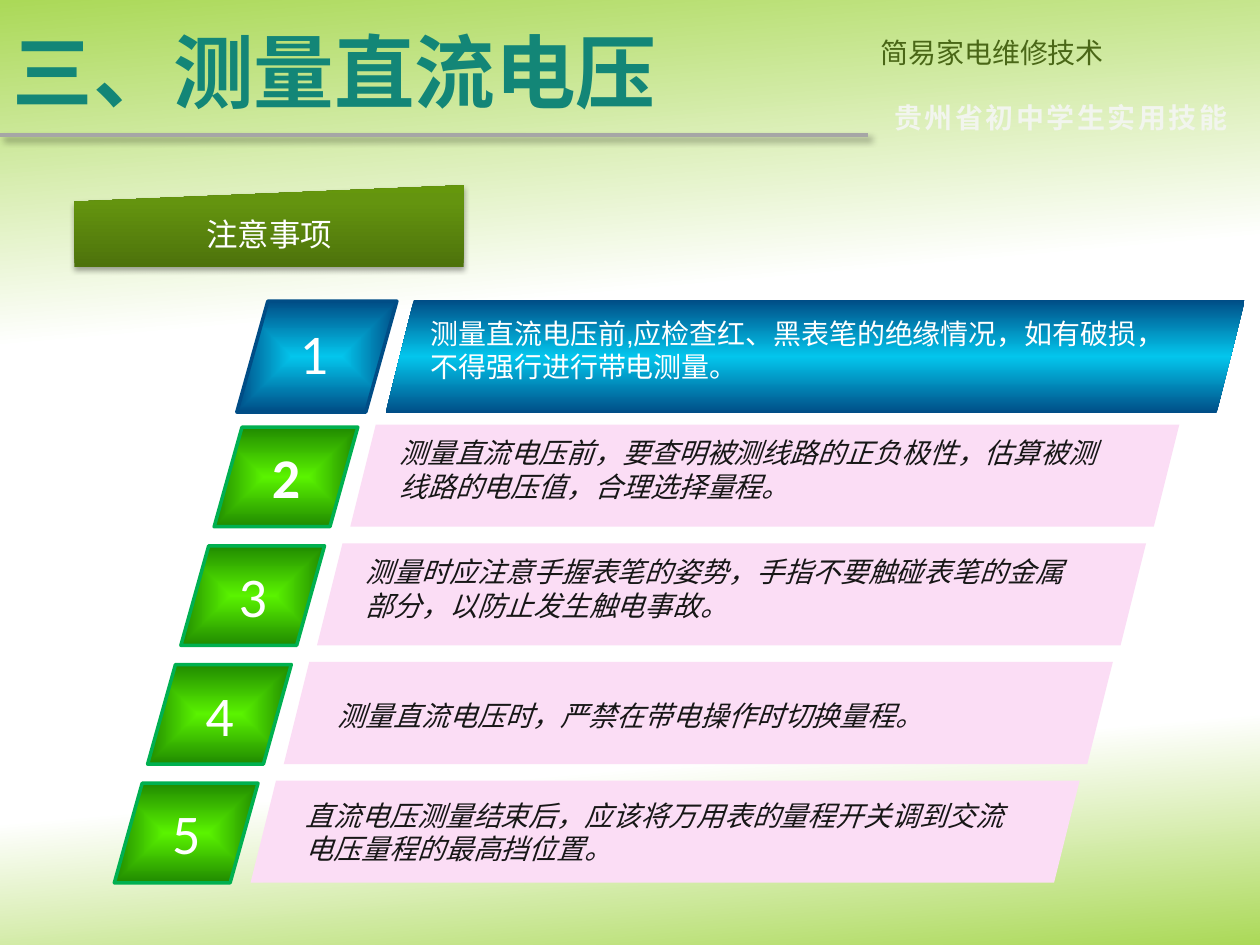
from dataclasses import dataclass

from lxml import etree
from pptx import Presentation
from pptx import util as u
from pptx.dml.color import RGBColor
from pptx.enum import shapes, text
from pptx.oxml import parse_xml
from pptx.oxml.ns import nsdecls, qn

# The slide is a grid of 100 columns by 75 rows.
COLUMN = ROW = u.Inches(0.1)

WHITE = RGBColor(0xFF, 0xFF, 0xFF)
BLACK = RGBColor(0x00, 0x00, 0x00)
LIME = RGBColor(0xAB, 0xD9, 0x58)
TEAL = RGBColor(0x13, 0x86, 0x77)
OLIVE = RGBColor(0x4A, 0x67, 0x17)
PALE = RGBColor(0xF2, 0xF5, 0xEE)
GREY = RGBColor(0xA6, 0xA6, 0xA6)
INK = RGBColor(0x17, 0x17, 0x17)
PINK = RGBColor(0xFB, 0xDD, 0xF5)
DEEP_BLUE = RGBColor(0x00, 0x4D, 0x86)
BRIGHT_BLUE = RGBColor(0x03, 0xC6, 0xED)
GREEN_EDGE = RGBColor(0x00, 0xB0, 0x50)
DEEP_GREEN = RGBColor(0x20, 0x8A, 0x00)
BRIGHT_GREEN = RGBColor(0x5A, 0xF3, 0x00)

BACKGROUND = [(0, LIME), (33, WHITE), (52, WHITE), (78, WHITE), (100, LIME)]
LABEL = [(0, RGBColor(0x4D, 0x72, 0x0B)), (80, RGBColor(0x64, 0x94, 0x0F)),
         (100, RGBColor(0x65, 0x97, 0x0C))]
BLUE_BAND = [(0, DEEP_BLUE), (50, BRIGHT_BLUE), (100, DEEP_BLUE)]
BLUE_GLOW = [(0, BRIGHT_BLUE), (100, DEEP_BLUE)]
GREEN_GLOW = [(0, BRIGHT_GREEN), (100, DEEP_GREEN)]

CHINESE = "Noto Sans CJK SC"


@dataclass
class Area:
    column: float
    row: float
    columns: float
    rows: float

    def lengths(self) -> list[int]:
        return [int(self.column * COLUMN), int(self.row * ROW),
                int(self.columns * COLUMN), int(self.rows * ROW)]


@dataclass
class Style:
    size: float
    color: RGBColor
    font: str = CHINESE
    bold: bool = False
    italic: bool = False
    spacing: int = 0


@dataclass
class Note:
    words: str
    indent: float
    drop: float
    rows: float = 6.4
    bold_number: bool = False


NOTES = [
    Note("测量直流电压前，要查明被测线路的正负极性，估算被测线路的电压值，合理选择量程。",
         2.9, 0.4, bold_number=True),
    Note("测量时应注意手握表笔的姿势，手指不要触碰表笔的金属部分，以防止发生触电事故。", 2.9, 0.4),
    Note("测量直流电压时，严禁在带电操作时切换量程。", 3.3, 2.4, 3.7),
    Note("直流电压测量结束后，应该将万用表的量程开关调到交流电压量程的最高挡位置。", 3.4, 0.9),
]


def set_gradient(fill, parent, stops: list, angle: float | None = None) -> None:
    """Fill with stops along a clockwise angle, or from the centre without one."""
    fill.solid()
    marks = "".join(f'<a:gs pos="{place * 1000}"><a:srgbClr val="{color}"/></a:gs>'
                    for place, color in stops)
    if angle is None:
        course = ('<a:path path="shape"><a:fillToRect l="50000" t="50000" '
                  'r="50000" b="50000"/></a:path>')
    else:
        course = f'<a:lin ang="{int(angle * 60000)}" scaled="0"/>'
    gradient = parse_xml(f'<a:gradFill {nsdecls("a")} rotWithShape="1">'
                         f'<a:gsLst>{marks}</a:gsLst>{course}</a:gradFill>')
    parent.replace(parent.find(qn("a:solidFill")), gradient)


def add_shadow(properties, alpha: int, blur: float, distance: float, angle: int) -> None:
    effects = properties.find(qn("a:effectLst"))
    if effects is None:
        effects = etree.SubElement(properties, qn("a:effectLst"))
    effects.append(parse_xml(
        f'<a:outerShdw {nsdecls("a")} blurRad="{u.Pt(blur)}" dist="{u.Pt(distance)}" '
        f'dir="{angle * 60000}" algn="tl" rotWithShape="0"><a:srgbClr val="{BLACK}">'
        f'<a:alpha val="{alpha * 1000}"/></a:srgbClr></a:outerShdw>'))


def write(shape, words: str, style: Style, align=text.PP_ALIGN.LEFT,
          anchor=text.MSO_ANCHOR.TOP) -> None:
    frame = shape.text_frame
    frame.text = words
    frame.word_wrap = True
    frame.vertical_anchor = anchor
    para = frame.paragraphs[0]
    para.alignment = align
    for span in para.runs:
        font = span.font
        font.size = u.Pt(style.size)
        font.name = style.font
        font.bold = style.bold
        font.italic = style.italic
        font.color.rgb = style.color
        properties = span._r.get_or_add_rPr()
        properties.find(qn("a:latin")).addnext(
            parse_xml(f'<a:ea {nsdecls("a")} typeface="{CHINESE}"/>'))
        if style.spacing:
            properties.set("spc", str(style.spacing))


def add_words(page, area: Area, words: str, style: Style, **layout) -> None:
    write(page.shapes.add_textbox(*area.lengths()), words, style, **layout)


def add_block(page, kind, area: Area):
    block = page.shapes.add_shape(kind, *area.lengths())
    block.shadow.inherit = False
    block.line.fill.background()
    return block


def add_tile(page, area: Area, stops: list, edge: RGBColor) -> None:
    tile = add_block(page, shapes.MSO_SHAPE.PARALLELOGRAM, area)
    tile.adjustments[0] = 0.28
    set_gradient(tile.fill, tile._element.spPr, stops)
    tile.line.color.rgb = edge
    tile.line.width = u.Pt(2)


def add_first_note(page) -> None:
    panel = add_block(page, shapes.MSO_SHAPE.PARALLELOGRAM, Area(30.6, 23.8, 68.2, 9))
    set_gradient(panel.fill, panel._element.spPr, BLUE_BAND, 270)
    add_tile(page, Area(18.8, 23.9, 12.7, 8.8), BLUE_GLOW, DEEP_BLUE)
    add_words(page, Area(22.8, 24.8, 4.8, 6.3), "1", Style(32, WHITE, "Calibri"))
    add_words(page, Area(33.2, 24.6, 59.1, 6.4),
              "测量直流电压前,应检查红、黑表笔的绝缘情况，如有破损，不得强行进行带电测量。",
              Style(16, WHITE, "Arial"))


def add_note(page, index: int, note: Note) -> None:
    """Each note sits one step lower and further left than the one before."""
    left, top = 27.8 - 2.64 * index, 33.7 + 9.42 * index
    panel = add_block(page, shapes.MSO_SHAPE.PARALLELOGRAM, Area(left, top, 65.8, 8.1))
    panel.fill.solid()
    panel.fill.fore_color.rgb = PINK
    add_tile(page, Area(left - 10.8, top + 0.2, 11.4, 7.9), GREEN_GLOW, GREEN_EDGE)
    add_words(page, Area(left - 7.2, top + 0.95, 4.3, 6.4), str(index + 2),
              Style(32, WHITE, "Calibri", bold=note.bold_number))
    add_words(page, Area(left + note.indent, top + note.drop, 59.1, note.rows),
              note.words, Style(16, INK, "Arial", italic=True))


def add_heading(page) -> None:
    title = page.shapes.title
    title.left, title.top, title.width, title.height = Area(0, 0.5, 68.9, 10.2).lengths()
    write(title, "三、测量直流电压", Style(46, TEAL, bold=True),
          anchor=text.MSO_ANCHOR.MIDDLE)
    rule = page.shapes.add_connector(
        shapes.MSO_CONNECTOR.STRAIGHT, 0, int(10.7 * ROW), int(68.9 * COLUMN), int(10.7 * ROW))
    rule.line.color.rgb = GREY
    rule.line.width = u.Pt(2.25)
    add_shadow(rule._element.spPr, 40, 4, 3, 45)
    add_words(page, Area(68.9, 2.3, 31.1, 3.7), "简易家电维修技术", Style(16, OLIVE),
              align=text.PP_ALIGN.JUSTIFY)
    add_words(page, Area(70, 7.5, 30, 3.7), "贵州省初中学生实用技能",
              Style(16, PALE, bold=True, spacing=150))


def add_label(page) -> None:
    label = add_block(page, shapes.MSO_SHAPE.FLOWCHART_MANUAL_INPUT,
                      Area(5.9, 14.7, 30.9, 6.5))
    set_gradient(label.fill, label._element.spPr, LABEL, 270)
    add_shadow(label._element.spPr, 35, 3.1, 1.8, 90)
    write(label, "注意事项", Style(18, WHITE), align=text.PP_ALIGN.CENTER,
          anchor=text.MSO_ANCHOR.MIDDLE)


def main() -> None:
    deck = Presentation()
    deck.slide_width, deck.slide_height = 100 * COLUMN, 75 * ROW
    page = deck.slides.add_slide(deck.slide_layouts[5])
    fill = page.background.fill
    fill.solid()
    set_gradient(fill, next(page._element.iter(qn("p:bgPr"))), BACKGROUND, 85)
    add_heading(page)
    add_label(page)
    for index, note in enumerate(NOTES):
        add_note(page, index, note)
    add_first_note(page)
    deck.save("out.pptx")


if __name__ == "__main__":
    main()
